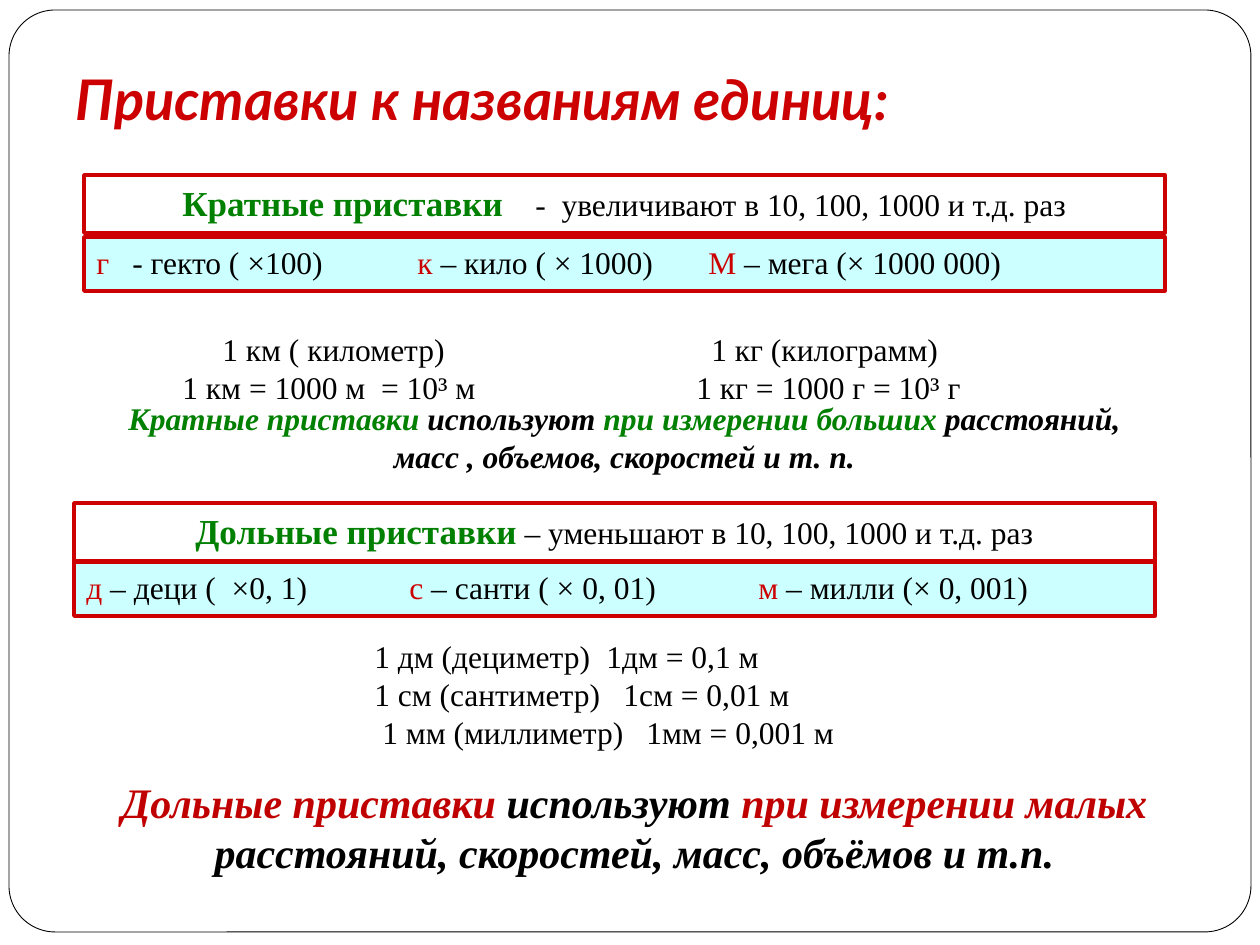
from dataclasses import dataclass

from lxml import etree
from pptx import Presentation
from pptx.dml.color import RGBColor
from pptx.enum.shapes import MSO_SHAPE
from pptx.enum.text import MSO_ANCHOR, MSO_AUTO_SIZE, PP_ALIGN
from pptx.oxml.ns import qn
from pptx.slide import Slide
from pptx.util import Emu, Pt

RECTANGLE = MSO_SHAPE.RECTANGLE
ROUNDED = MSO_SHAPE.ROUNDED_RECTANGLE
TOP, BOTTOM = MSO_ANCHOR.TOP, MSO_ANCHOR.BOTTOM
LEFT, CENTER = PP_ALIGN.LEFT, PP_ALIGN.CENTER
GROW, FIXED = MSO_AUTO_SIZE.SHAPE_TO_FIT_TEXT, MSO_AUTO_SIZE.NONE

COLORS = {
    "black": "000000",
    "white": "FFFFFF",
    "red": "CC0000",
    "dark red": "C00000",
    "green": "008000",
    "cyan": "CCFFFF",
}
PX_PER_INCH = 126
BOX_WIDTH = 1081


def px(length):
    return Emu(round(length * 914400 / PX_PER_INCH))


def rgb(name):
    return RGBColor.from_string(COLORS[name])


@dataclass
class SlideBuilder:
    slide: Slide
    body_font: str = "Times New Roman"
    title_font: str = "Lato"
    body_size: int = 18

    def add_runs(self, paragraph, runs, tabs=(), align=LEFT, **style):
        """Add (text, color, overrides) runs; tabs are px from the text edge."""
        paragraph.alignment = align
        if tabs:
            tab_list = etree.SubElement(
                paragraph._p.get_or_add_pPr(), qn("a:tabLst"))
            for position in tabs:
                etree.SubElement(tab_list, qn("a:tab"),
                                 pos=str(px(position)), algn="l")
        for text, color, *overrides in runs:
            look = {"size": self.body_size, "font": self.body_font,
                    "bold": False, "italic": False, **style}
            for override in overrides:
                look.update(override)
            run = paragraph.add_run()
            run.text = text
            run.font.name = look["font"]
            run.font.size = Pt(look["size"])
            run.font.bold = look["bold"]
            run.font.italic = look["italic"]
            run.font.color.rgb = rgb(color)

    def panel(self, kind, box, fill, line, line_width):
        shape = self.slide.shapes.add_shape(kind, *map(px, box))
        shape.shadow.inherit = False
        shape.fill.solid()
        shape.fill.fore_color.rgb = rgb(fill)
        shape.line.color.rgb = rgb(line)
        shape.line.width = Pt(line_width)
        return shape

    def frame(self, box):
        shape = self.panel(ROUNDED, box, "white", "black", 0.5)
        shape.adjustments[0] = 0.05
        self.slide.shapes.title._element.addprevious(shape._element)

    def title(self, box, text):
        title = self.slide.shapes.title
        title.left, title.top, title.width, title.height = map(px, box)
        text_frame = title.text_frame
        text_frame.auto_size = FIXED
        text_frame.vertical_anchor = BOTTOM
        text_frame.margin_bottom = px(13)
        self.add_runs(text_frame.paragraphs[0], [(text, "red")],
                      font=self.title_font, size=32, bold=True, italic=True)

    def prepare(self, shape):
        text_frame = shape.text_frame
        text_frame.word_wrap = True
        text_frame.auto_size = GROW
        text_frame.vertical_anchor = TOP
        return text_frame

    def banner(self, box, fill, runs, tabs=(), align=LEFT):
        shape = self.panel(RECTANGLE, box, fill, "red", 2)
        self.add_runs(self.prepare(shape).paragraphs[0], runs, tabs, align)

    def text_box(self, box):
        return self.prepare(self.slide.shapes.add_textbox(*map(px, box)))

    def examples(self, box, lines):
        text_frame = self.text_box(box)
        for index, (text, tabs) in enumerate(lines):
            paragraph = (text_frame.add_paragraph() if index
                         else text_frame.paragraphs[0])
            self.add_runs(paragraph, [(text, "black")], tabs)

    def conclusion(self, box, size, runs):
        paragraph = self.text_box(box).paragraphs[0]
        self.add_runs(paragraph, runs, align=CENTER,
                      size=size, bold=True, italic=True)


def main():
    presentation = Presentation()
    presentation.slide_width, presentation.slide_height = px(1260), px(945)
    title_only = presentation.slide_layouts[5]
    builder = SlideBuilder(presentation.slides.add_slide(title_only))
    heading = {"size": 20, "bold": True}

    builder.frame((9, 10, 1242, 922))
    builder.title((63, 38, 1134, 107), "Приставки к названиям единиц:")

    builder.banner((84, 175, BOX_WIDTH, 58), "white", [
        ("\tКратные приставки", "green", heading),
        ("\t-  увеличивают в 10, 100, 1000 и т.д. раз", "black"),
    ], tabs=(86, 439))
    builder.banner((84, 237, BOX_WIDTH, 54), "cyan", [
        ("г", "red"), ("\t- гекто ( ×100)", "black"),
        ("\tк ", "red"), ("– кило ( × 1000)", "black"),
        ("\tМ", "red"), (" – мега (× 1000 000)", "black"),
    ], tabs=(36, 321, 612))
    builder.examples((84, 324, BOX_WIDTH, 88), [
        ("\t1 км ( километр)\t1 кг (килограмм)", (126, 615)),
        ("\t1 км = 1000 м  = 10³ м\t1 кг = 1000 г = 10³ г", (86, 600)),
    ])

    builder.banner((74, 503, BOX_WIDTH, 58), "white", [
        ("Дольные приставки", "green", heading),
        (" – уменьшают в 10, 100, 1000 и т.д. раз", "black"),
    ], align=CENTER)
    builder.banner((74, 562, BOX_WIDTH, 54), "cyan", [
        ("д", "red"), (" – деци (  ×0, 1)", "black"),
        ("\tс", "red"), (" – санти ( × 0, 01)", "black"),
        ("\tм", "red"), (" – милли (× 0, 001)", "black"),
    ], tabs=(323, 672))
    builder.examples((362, 631, 556, 127), [
        ("1 дм (дециметр)\t1дм = 0,1 м", (232,)),
        ("1 см (сантиметр)\t1см = 0,01 м", (249,)),
        ("\t1 мм (миллиметр)\t1мм = 0,001 м", (8, 272)),
    ])

    builder.conclusion((84, 393, BOX_WIDTH, 88), 18, [
        ("Кратные приставки", "green"), (" используют ", "black"),
        ("при измерении больших", "green"),
        (" расстояний, масс , объемов, скоростей и т. п.", "black"),
    ])
    builder.conclusion((94, 770, BOX_WIDTH, 115), 24, [
        ("Дольные приставки ", "dark red"), ("используют ", "black"),
        ("при измерении малых ", "dark red"),
        ("расстояний, скоростей, масс, объёмов и т.п.", "black"),
    ])

    presentation.save("out.pptx")


if __name__ == "__main__":
    main()
